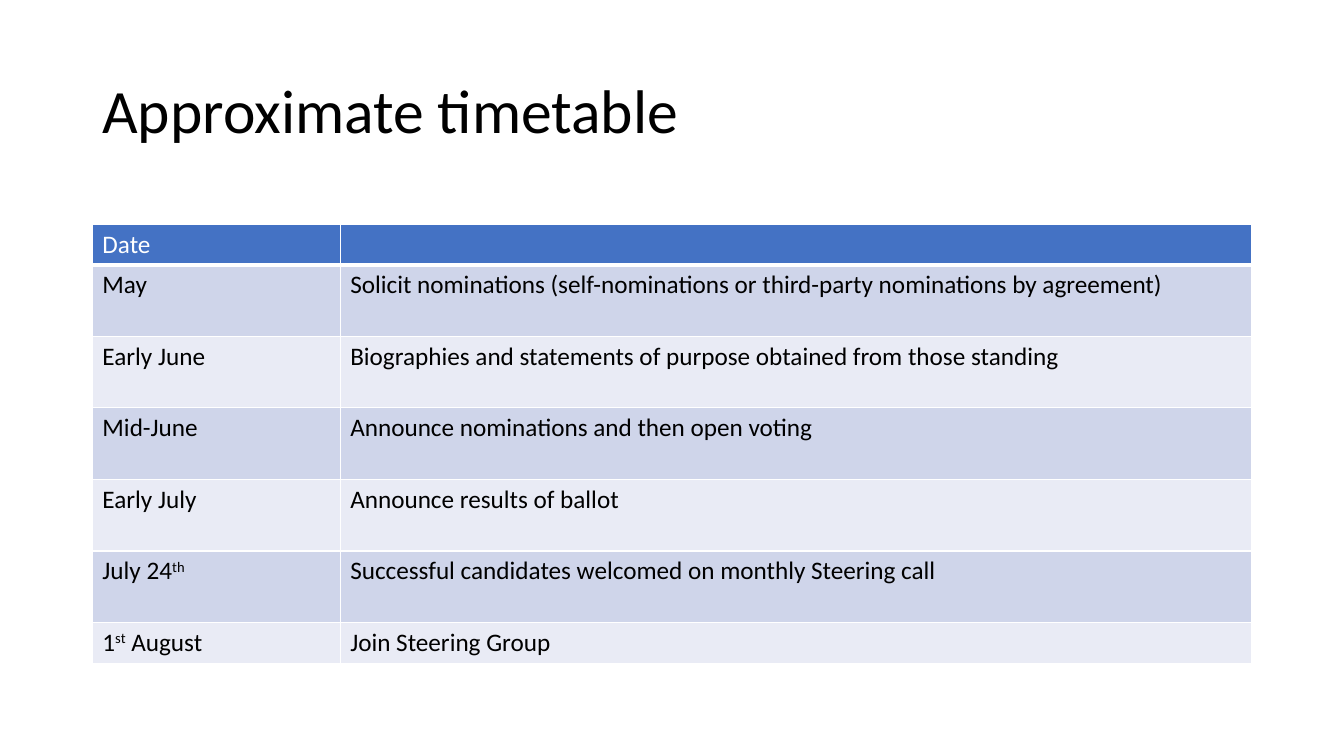
from lxml import etree
from pptx import Presentation
from pptx.dml.color import RGBColor
from pptx.enum import text
from pptx.oxml import ns
from pptx.util import Pt

COLORS = {"white": "FFFFFF", "black": "000000", "head": "4472C4",
          "dark": "CFD5EA", "light": "E9EBF5"}


def write(frame, words, size=18, color="black", spacing=None):
    """Fill a text frame; parts between ^ marks are superscript."""
    para = frame.paragraphs[0]
    if spacing:
        para.line_spacing = spacing
    for i, part in enumerate(words.split("^")):
        if not part:
            continue
        run = para.add_run()
        run.text = part
        font = run.font
        font.name, font.size, font.bold = "Calibri", Pt(size), False
        font.color.rgb = RGBColor.from_string(COLORS[color])
        if i % 2:
            run._r.get_or_add_rPr().set("baseline", "30000")


def edge(cell, side, width):
    """Draw one white border of a cell."""
    line = etree.SubElement(cell._tc.get_or_add_tcPr(), ns.qn(f"a:ln{side}"), w=str(Pt(width)))
    fill = etree.SubElement(line, ns.qn("a:solidFill"))
    etree.SubElement(fill, ns.qn("a:srgbClr"), val=COLORS["white"])


deck = Presentation()
deck.slide_width, deck.slide_height = Pt(960), Pt(540)
slide = deck.slides.add_slide(deck.slide_layouts[6])

# Title
title = slide.shapes.add_textbox(Pt(66), Pt(28.75), Pt(828), Pt(104.4)).text_frame
title.word_wrap = True
title.vertical_anchor = text.MSO_ANCHOR.MIDDLE
write(title, "Approximate timetable", size=44, spacing=0.9)

# Timetable
rows = [
    ("Date", ""),
    ("May", "Solicit nominations (self-nominations or third-party nominations by agreement)"),
    ("Early June", "Biographies and statements of purpose obtained from those standing"),
    ("Mid-June", "Announce nominations and then open voting"),
    ("Early July", "Announce results of ballot"),
    ("July 24^th^", "Successful candidates welcomed on monthly Steering call"),
    ("1^st^ August", "Join Steering Group"),
]
last = len(rows) - 1
table = slide.shapes.add_table(len(rows), 2, Pt(66), Pt(160), Pt(828), Pt(313.9)).table
table.columns[0].width, table.columns[1].width = Pt(177), Pt(651)

for r, row in enumerate(rows):
    table.rows[r].height = Pt(29.2 if r in (0, last) else 51.1)
    shade = "head" if r == 0 else ("light", "dark")[r % 2]
    for c, words in enumerate(row):
        cell = table.cell(r, c)
        for side in "LRTB":
            edge(cell, side, 3 if r == 0 and side == "B" else 1)
        cell.fill.solid()
        cell.fill.fore_color.rgb = RGBColor.from_string(COLORS[shade])
        write(cell.text_frame, words, color="black" if r else "white")

deck.save("out.pptx")
